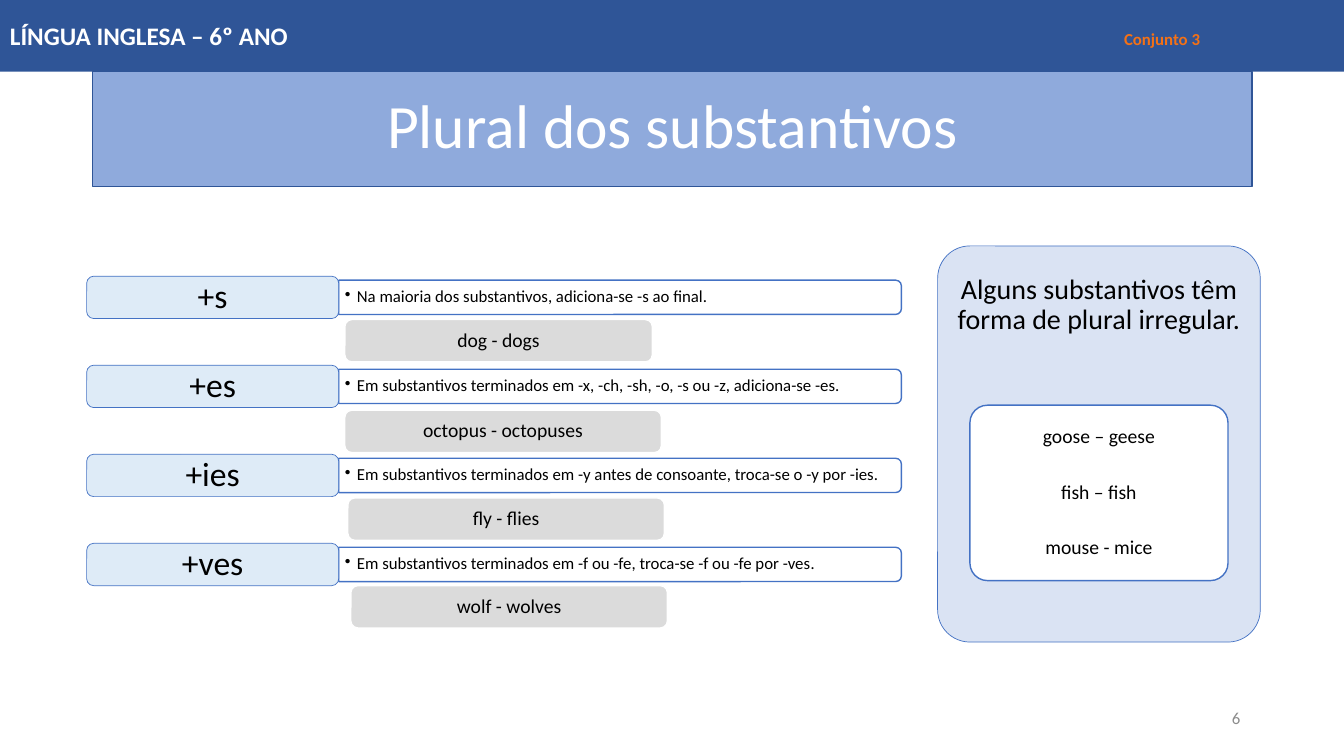
from lxml import etree
from pptx import Presentation
from pptx.dml.color import RGBColor
from pptx.enum.shapes import MSO_SHAPE as Shape
from pptx.enum.text import MSO_ANCHOR as Anchor, PP_ALIGN as Align
from pptx.oxml.ns import qn
from pptx.util import Inches, Pt

COLORS = {
    "header": "2F5597", "title": "8FAADC", "accent": "4472C4",
    "ending": "DEEBF7", "example": "DBDBDB", "panel": "DAE3F3",
    "orange": "F47116", "gray": "8C8C8C", "white": "FFFFFF", "black": "000000",
}

# Ending, rule (as runs), example, and the example's left, top and width
RULES = [
    ("+s", [("Na maioria dos substantivos, adiciona-se -s ao final.", {})],
     "dog - dogs", (3.42, 3.17, 3.05)),
    ("+es", [("Em substantivos terminados em -x, -ch, -sh, -o, -s ou -z, adiciona-se -es.", {})],
     "octopus - octopuses", (3.42, 4.07, 3.14)),
    ("+ies", [("Em substantivos terminados em -y antes de consoante, troca-se o -y por -ies.", {})],
     "fly - flies", (3.45, 4.94, 3.14)),
    ("+ves", [("Em substantivos terminados em -f ou -fe, troca-se -f ou -fe por -ves", {}),
              (".", {"italic": True})],
     "wolf - wolves", (3.48, 5.81, 3.14)),
]
FIRST_ROW, ROW_STEP, ROW_HEIGHT = 2.74, 2.65 / 3, 0.42


def rgb(name):
    return RGBColor.from_string(COLORS[name])


def write_text(shape, paragraphs, size=12, color="black", bold=None, align=Align.CENTER,
               spacing=0.9, gap=0, inset=(0.1, 0.05), bullet=False, tab=None):
    """Fill a shape; each paragraph is a string or a list of (text, overrides) runs."""
    frame = shape.text_frame
    frame.word_wrap = True
    frame.vertical_anchor = Anchor.MIDDLE
    frame.margin_left = frame.margin_right = Inches(inset[0])
    frame.margin_top = frame.margin_bottom = Inches(inset[1])
    for index, content in enumerate(paragraphs):
        paragraph = frame.add_paragraph() if index else frame.paragraphs[0]
        paragraph.alignment = align
        paragraph.line_spacing = spacing
        if index:
            paragraph.space_before = Pt(gap)
        properties = paragraph._p.get_or_add_pPr()
        if bullet:
            properties.set("marL", str(Inches(0.12)))
            properties.set("indent", str(-Inches(0.12)))
            etree.SubElement(properties, qn("a:buChar"), char="•")
        if tab:
            stops = etree.SubElement(properties, qn("a:tabLst"))
            etree.SubElement(stops, qn("a:tab"), pos=str(Inches(tab)), algn="l")
        runs = [(content, {})] if isinstance(content, str) else content
        for text, overrides in runs:
            run = paragraph.add_run()
            run.text = text
            font = run.font
            font.name = "Calibri"
            font.size = Pt(overrides.get("size", size))
            font.bold = bold
            font.italic = overrides.get("italic")
            font.color.rgb = rgb(overrides.get("color", color))


class SlideBuilder:
    def __init__(self, presentation):
        self.slide = presentation.slides.add_slide(presentation.slide_layouts[6])

    def box(self, kind, at, fill, line=None, width=1, radius=None, rotation=0):
        shape = self.slide.shapes.add_shape(kind, *map(Inches, at))
        shape.shadow.inherit = False
        shape.rotation = rotation
        shape.fill.solid()
        shape.fill.fore_color.rgb = rgb(fill)
        if line:
            shape.line.color.rgb = rgb(line)
            shape.line.width = Pt(width)
        else:
            shape.line.fill.background()
        if radius is not None:
            shape.adjustments[0] = radius
        return shape

    def label(self, at, paragraphs, **style):
        text_box = self.slide.shapes.add_textbox(*map(Inches, at))
        write_text(text_box, paragraphs, **style)

    def rule_row(self, top, ending, rule, example, example_at):
        # The bar is turned so that its rounded corners face right
        length, height = 5.58, 0.34
        center_x, center_y = 6.15, top + ROW_HEIGHT / 2
        self.box(Shape.ROUND_2_SAME_RECTANGLE,
                 (center_x - height / 2, center_y - length / 2, height, length),
                 "white", "accent", rotation=90)
        self.label((3.37, center_y - 0.15, 5.56, 0.3), [rule], align=Align.LEFT,
                   inset=(0.05, 0.03), bullet=True)
        ending_box = self.box(Shape.ROUNDED_RECTANGLE, (0.86, top, 2.5, ROW_HEIGHT),
                              "ending", "accent", 0.5)
        write_text(ending_box, [ending], size=24)
        left, example_top, width = example_at
        example_box = self.box(Shape.ROUNDED_RECTANGLE,
                               (left, example_top, width, ROW_HEIGHT), "example", "white")
        write_text(example_box, [example], size=14, inset=(0.06, 0.03))


def main():
    presentation = Presentation()
    presentation.slide_width, presentation.slide_height = Inches(13.33), Inches(7.5)
    builder = SlideBuilder(presentation)

    # Title and header band
    title = builder.box(Shape.RECTANGLE, (0.92, 0.71, 11.5, 1.14), "title", "header")
    write_text(title, ["Plural dos substantivos"], size=44, color="white")
    header = builder.box(Shape.RECTANGLE, (0, 0, 13.33, 0.71), "header")
    write_text(header, [[("LÍNGUA INGLESA – 6º ANO\t", {}),
                         ("Conjunto 3", {"size": 12, "color": "orange"})]],
               size=18, color="white", bold=True, align=Align.LEFT, spacing=1, tab=11.05)

    # Plural rules
    for index, rule in enumerate(RULES):
        builder.rule_row(FIRST_ROW + index * ROW_STEP, *rule)

    # Irregular plurals
    builder.box(Shape.ROUNDED_RECTANGLE, (9.3, 2.44, 3.2, 3.93), "panel", "accent", 0.5, 0.1)
    builder.label((9.3, 2.44, 3.2, 1.18),
                  ["Alguns substantivos têm forma de plural irregular."],
                  size=20, inset=(0.08, 0.08))
    irregular = builder.box(Shape.ROUNDED_RECTANGLE, (9.62, 4.02, 2.56, 1.74),
                            "white", "accent", radius=0.1)
    write_text(irregular, ["goose – geese", "fish – fish", "mouse - mice"],
               size=14, gap=24.6, inset=(0.04, 0.03))

    # Slide number
    builder.label((9.4, 6.92, 3, 0.4), ["6"], color="gray", align=Align.RIGHT, spacing=1)

    presentation.save("out.pptx")


if __name__ == "__main__":
    main()
